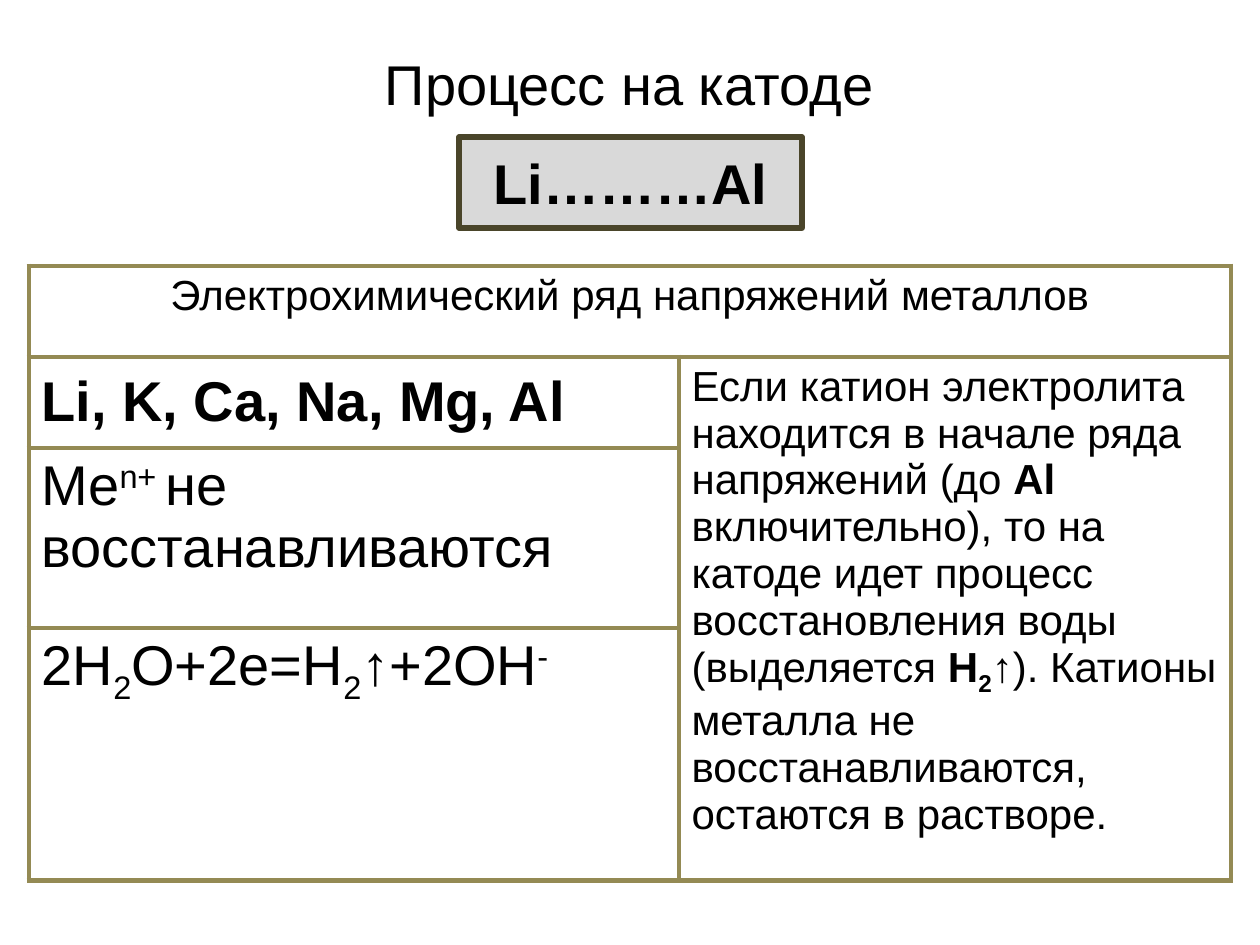
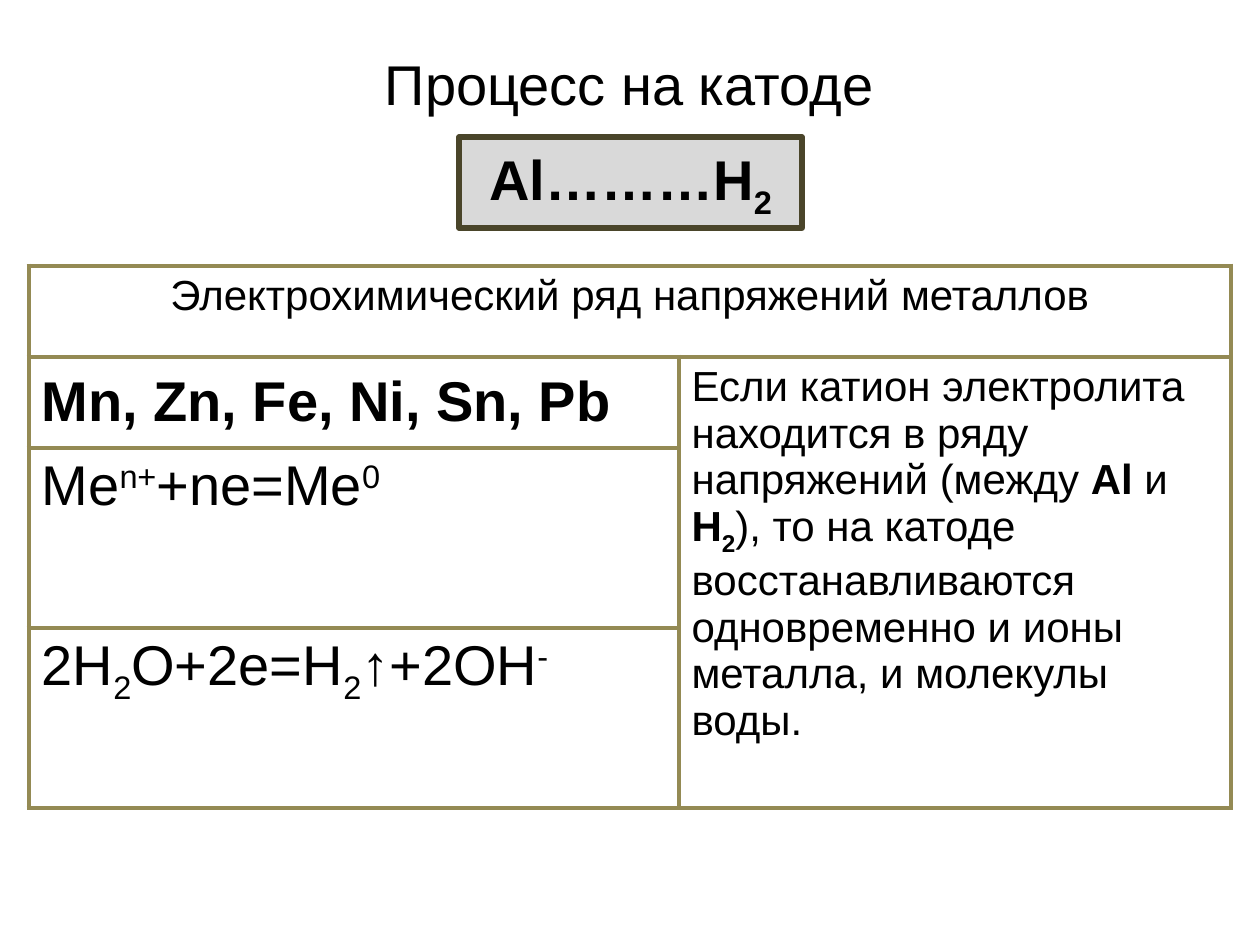
"""Build two slides on the cathode process in electrolysis."""
from dataclasses import dataclass
from typing import NamedTuple

from lxml.etree import SubElement
from pptx import Presentation
from pptx.dml.color import RGBColor as Rgb
from pptx.enum.shapes import MSO_SHAPE as Preset
from pptx.enum.text import MSO_ANCHOR as Anchor, PP_ALIGN as Align
from pptx.oxml.ns import qn
from pptx.util import Emu, Pt


@dataclass(frozen=True)
class Theme:
    """Colours, fonts and sizes shared by the slides."""
    text: str = "000000"
    box_fill: str = "D9D9D9"
    box_line: str = "4A452A"
    grid_line: str = "948A54"
    font: str = "Arial"
    arrow_font: str = "Times New Roman"
    large: int = 32
    medium: int = 24
    line_width: int = 3


class Run(NamedTuple):
    """A stretch of text with one format."""
    text: str
    bold: bool = False
    baseline: int = 0
    font: str = Theme.font


class Box(NamedTuple):
    """A rectangle in px."""
    left: int
    top: int
    width: int
    height: int


class CathodeSlide(NamedTuple):
    """The content that varies between the slides."""
    series_range: list[Run]
    metals: str
    metal_reaction: list[Run]
    explanation: list[Run]


THEME = Theme()
EMU_PER_INCH, PX_PER_INCH = 914400, 126
SLIDE_WIDTH, SLIDE_HEIGHT = 1260, 945
TITLE_BOX = Box(246, 38, 767, 91)
RANGE_BOX = Box(459, 137, 343, 91)
TABLE_LEFT, TABLE_TOP = 29, 266
COLUMN_WIDTHS = (650, 552)
ROW_HEIGHTS = (91, 91, 180, 180)


def px(length: int) -> Emu:
    """Turn px into EMU."""
    return Emu(round(length * EMU_PER_INCH / PX_PER_INCH))


def sub(text: str, bold: bool = False) -> Run:
    """Make a subscript run."""
    return Run(text, bold, -25000)


def sup(text: str) -> Run:
    """Make a superscript run."""
    return Run(text, baseline=30000)


def arrow(bold: bool = False) -> Run:
    """Make the arrow that marks a released gas."""
    return Run("↑", bold, font=THEME.arrow_font)


TITLE = [Run("Процесс на катоде")]
TABLE_HEADING = [Run("Электрохимический ряд напряжений металлов")]
WATER_REACTION = [Run("2H"), sub("2"), Run("O+2e=H"), sub("2"), arrow(), Run("+2OH"), sup("-")]

CATHODE_SLIDES = [
    CathodeSlide(
        [Run("Li………Al", True)],
        "Li, K, Ca, Na, Mg, Al",
        [Run("Me"), sup("n+ "), Run("не восстанавливаются")],
        [Run("Если катион электролита находится в начале ряда напряжений (до "),
         Run("Al ", True),
         Run("включительно), то на катоде идет процесс восстановления воды (выделяется "),
         Run("H", True), sub("2", True), arrow(True),
         Run("). Катионы металла не восстанавливаются, остаются в растворе.")],
    ),
    CathodeSlide(
        [Run("Al………H", True), sub("2", True)],
        "Mn, Zn, Fe, Ni, Sn, Pb",
        [Run("Me"), sup("n+"), Run("+ne=Me"), sup("0")],
        [Run("Если катион электролита находится в ряду напряжений (между "),
         Run("Al ", True), Run("и "), Run("H", True), sub("2", True),
         Run("), то на катоде восстанавливаются одновременно и ионы металла, "
             "и молекулы воды.")],
    ),
]


def write(frame, runs: list[Run], size: int, align=Align.LEFT) -> None:
    """Fill the first paragraph of a text frame run by run."""
    frame.word_wrap = True
    paragraph = frame.paragraphs[0]
    paragraph.alignment = align
    for item in runs:
        run = paragraph.add_run()
        run.text = item.text
        run.font.name = item.font
        run.font.size = Pt(size)
        run.font.bold = item.bold
        run.font.color.rgb = Rgb.from_string(THEME.text)
        if item.baseline:
            run.font._element.set("baseline", str(item.baseline))


def add_title(slide) -> None:
    """Add the shared title."""
    frame = slide.shapes.add_textbox(*map(px, TITLE_BOX)).text_frame
    frame.vertical_anchor = Anchor.MIDDLE
    write(frame, TITLE, THEME.large, Align.CENTER)


def add_range_box(slide, runs: list[Run]) -> None:
    """Add the framed range of the metal series."""
    shape = slide.shapes.add_shape(Preset.ROUNDED_RECTANGLE, *map(px, RANGE_BOX))
    shape.adjustments[0] = 0
    shape.shadow.inherit = False
    shape.fill.solid()
    shape.fill.fore_color.rgb = Rgb.from_string(THEME.box_fill)
    shape.line.color.rgb = Rgb.from_string(THEME.box_line)
    shape.line.width = Pt(THEME.line_width)
    shape.text_frame.vertical_anchor = Anchor.MIDDLE
    write(shape.text_frame, runs, THEME.large, Align.CENTER)


def outline_cell(cell) -> None:
    """Clear the fill of a cell and draw its four borders."""
    cell.fill.background()
    properties = cell._tc.get_or_add_tcPr()
    for index, side in enumerate(("lnL", "lnR", "lnT", "lnB")):
        line = SubElement(properties, qn(f"a:{side}"), w=str(Pt(THEME.line_width)))
        fill = SubElement(line, qn("a:solidFill"))
        SubElement(fill, qn("a:srgbClr"), val=THEME.grid_line)
        properties.insert(index, line)


def add_series_table(slide, content: CathodeSlide) -> None:
    """Add the table of metals, reactions and their explanation."""
    frame = slide.shapes.add_table(
        len(ROW_HEIGHTS), len(COLUMN_WIDTHS), px(TABLE_LEFT), px(TABLE_TOP),
        px(sum(COLUMN_WIDTHS)), px(sum(ROW_HEIGHTS)))
    table = frame.table
    table.first_row = table.horz_banding = False
    for column, width in zip(table.columns, COLUMN_WIDTHS):
        column.width = px(width)
    for row, height in zip(table.rows, ROW_HEIGHTS):
        row.height = px(height)
    for cell in table.iter_cells():
        outline_cell(cell)
    table.cell(0, 0).merge(table.cell(0, 1))
    table.cell(1, 1).merge(table.cell(3, 1))
    table.cell(1, 0).vertical_anchor = Anchor.MIDDLE

    write(table.cell(0, 0).text_frame, TABLE_HEADING, THEME.medium, Align.CENTER)
    write(table.cell(1, 1).text_frame, content.explanation, THEME.medium)
    left_column = ([Run(content.metals, True)], content.metal_reaction, WATER_REACTION)
    for row_index, runs in enumerate(left_column, start=1):
        write(table.cell(row_index, 0).text_frame, runs, THEME.large)


def main() -> None:
    """Build and save the presentation."""
    presentation = Presentation()
    presentation.slide_width = px(SLIDE_WIDTH)
    presentation.slide_height = px(SLIDE_HEIGHT)
    blank_layout = presentation.slide_layouts[6]
    for content in CATHODE_SLIDES:
        slide = presentation.slides.add_slide(blank_layout)
        add_title(slide)
        add_series_table(slide, content)
        add_range_box(slide, content.series_range)
    presentation.save("out.pptx")


if __name__ == "__main__":
    main()
